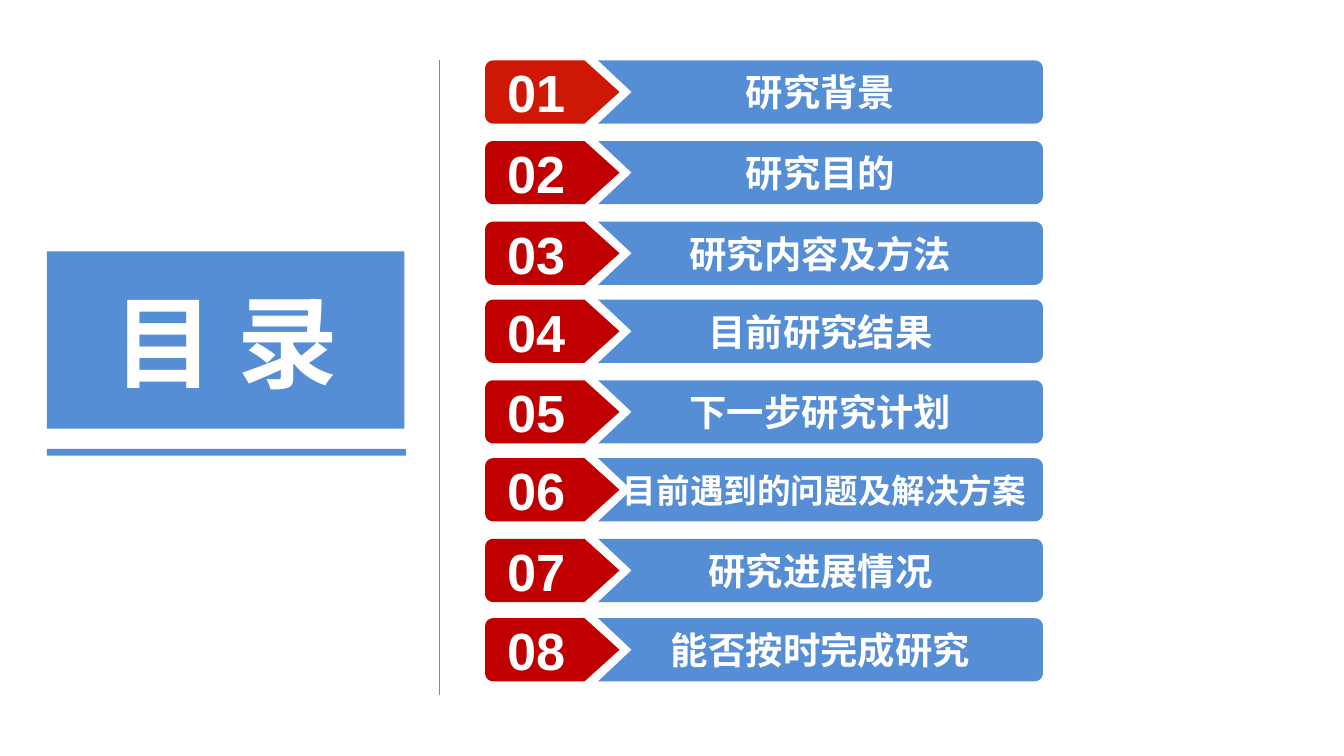
import math
from lxml import etree
from pptx import Presentation, util as u
from pptx.dml.color import RGBColor
from pptx.enum import shapes, text
from pptx.oxml import ns

COLORS = {"blue": "558ED5", "red": "C00000", "active": "CE1704", "white": "FFFFFF"}
LATIN, CJK = "Arial", "Noto Sans CJK SC"
TITLE = "目 录"
# number, heading, top of the row, heading size, left inset of the heading
ROWS = [
    ("01", "研究背景", 0.45, 20, 0.11),
    ("02", "研究目的", 1.05, 20, 0.11),
    ("03", "研究内容及方法", 1.65, 20, 0.11),
    ("04", "目前研究结果", 2.23, 20, 0.11),
    ("05", "下一步研究计划", 2.83, 20, 0.11),
    ("06", "目前遇到的问题及解决方案", 3.41, 18, 0.17),
    ("07", "研究进展情况", 4.01, 20, 0.11),
    ("08", "能否按时完成研究", 4.6, 20, 0.11),
]
ROW_H, RADIUS = 0.47, 0.06
TAG_LEFT, TAG_SHOULDER, TAG_TIP = 3.61, 4.35, 4.61
BAR_LEFT, BAR_NOTCH, BAR_RIGHT = 4.45, 4.7, 7.76

prs = Presentation()
prs.slide_width = u.Inches(10)
prs.slide_height = prs.slide_width * 9 // 16
s = prs.slides.add_slide(prs.slide_layouts[6])


def color(name):
    return RGBColor.from_string(COLORS[name])


def paint(sp, fill):
    sp.shadow.inherit = False
    sp.fill.solid()
    sp.fill.fore_color.rgb = color(fill)
    sp.line.fill.background()


def write(sp, words, size, font, left=0.1, right=0.1):
    tf = sp.text_frame
    tf.text = words
    tf.word_wrap = True
    tf.vertical_anchor = text.MSO_ANCHOR.MIDDLE
    tf.margin_left, tf.margin_right = u.Inches(left), u.Inches(right)
    tf.margin_top = tf.margin_bottom = u.Inches(0.05)
    p = tf.paragraphs[0]
    p.alignment = text.PP_ALIGN.CENTER
    f = p.runs[0].font
    f.size, f.bold, f.name = u.Pt(size), True, font
    f.color.rgb = color("white")
    ea = etree.SubElement(p.runs[0]._r.get_or_add_rPr(), ns.qn("a:ea"))
    ea.set("typeface", font)


def corner(cx, cy, start):
    """Points of a quarter circle, clockwise from the start angle."""
    angles = [math.radians(start + 15 * i) for i in range(7)]
    return [(cx + RADIUS * math.cos(a), cy + RADIUS * math.sin(a)) for a in angles]


def outline(points, fill):
    pts = [(u.Inches(x), u.Inches(y)) for x, y in points]
    builder = s.shapes.build_freeform(*pts[0])
    builder.add_line_segments(pts[1:], close=True)
    sp = builder.convert_to_shape()
    paint(sp, fill)
    return sp


def block(left, top, width, height):
    sp = s.shapes.add_shape(shapes.MSO_SHAPE.RECTANGLE,
                            *map(u.Inches, (left, top, width, height)))
    paint(sp, "blue")
    return sp


block(0.35, 3.34, 2.67, 0.05)
write(block(0.35, 1.87, 2.66, 1.32), TITLE, 54, CJK)

divider = s.shapes.add_connector(shapes.MSO_CONNECTOR.STRAIGHT,
                                 *map(u.Inches, (3.27, 0.45, 3.27, 5.17)))
divider.line.fill.solid()
divider.line.fill.fore_color.rgb = color("blue")
divider.line.width = u.Pt(1)
etree.SubElement(divider._element.spPr, ns.qn("a:effectLst"))

for i, (number, heading, top, size, inset) in enumerate(ROWS):
    middle, bottom = top + ROW_H / 2, top + ROW_H
    upper, lower = top + RADIUS, bottom - RADIUS
    tag = outline([(TAG_SHOULDER, top), (TAG_TIP, middle), (TAG_SHOULDER, bottom),
                   *corner(TAG_LEFT + RADIUS, lower, 90),
                   *corner(TAG_LEFT + RADIUS, upper, 180)],
                  "red" if i else "active")
    write(tag, number, 28, LATIN, 0.11, 0.35)
    bar = outline([(BAR_LEFT, top),
                   *corner(BAR_RIGHT - RADIUS, upper, 270),
                   *corner(BAR_RIGHT - RADIUS, lower, 0),
                   (BAR_LEFT, bottom), (BAR_NOTCH, middle)], "blue")
    write(bar, heading, size, CJK, inset, 0.11)

prs.save("out.pptx")
